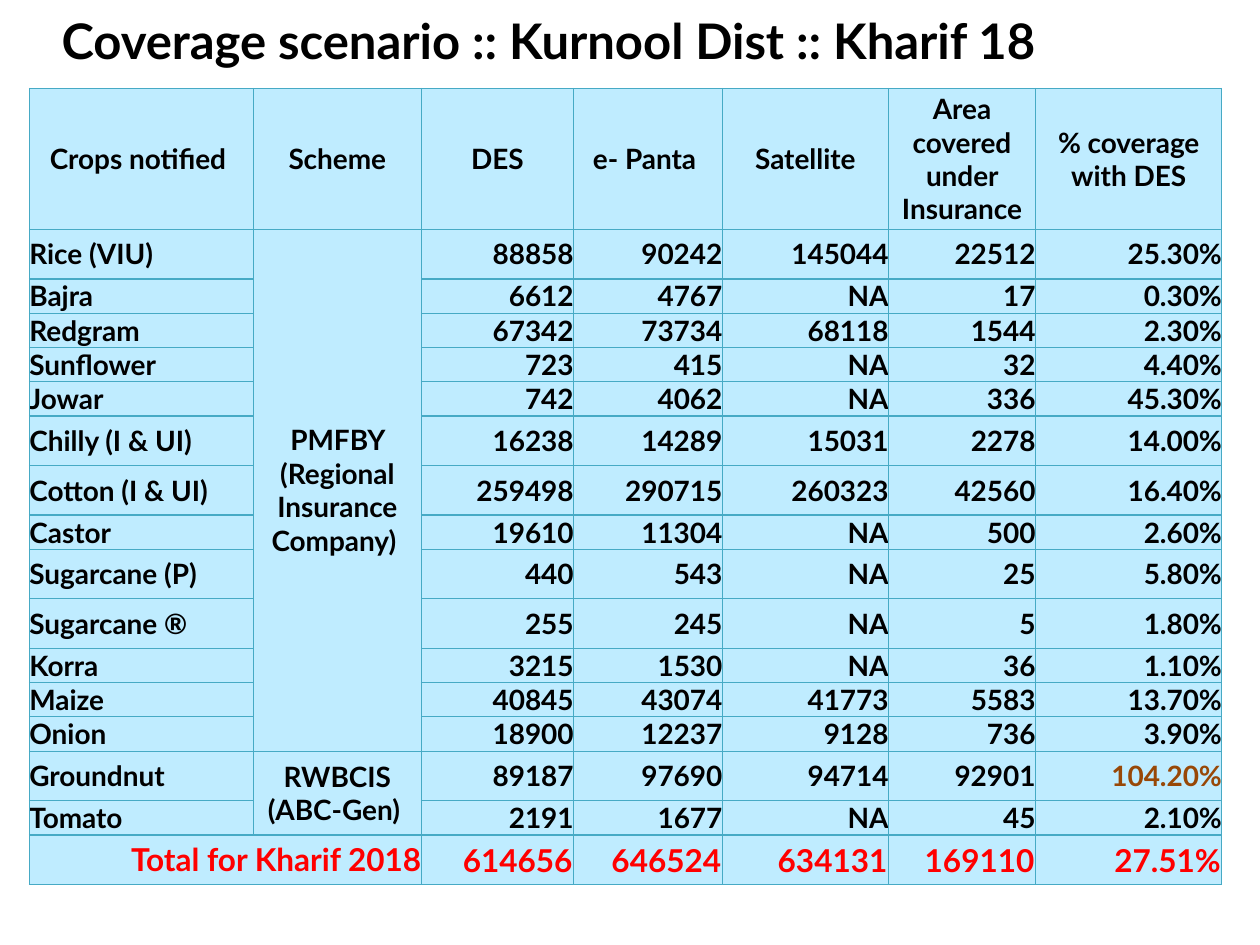
from lxml.etree import SubElement as Sub
from pptx import Presentation as Deck
from pptx.dml.color import RGBColor as Rgb
from pptx.enum.text import MSO_ANCHOR as Anchor, MSO_AUTO_SIZE as Fit, PP_ALIGN as Align
from pptx.oxml.ns import qn
from pptx.util import Pt

BLACK = Rgb(0x00, 0x00, 0x00)
RED = Rgb(0xFF, 0x00, 0x00)
BROWN = Rgb(0x98, 0x48, 0x07)
SKY = Rgb(0xBF, 0xEC, 0xFF)
TEAL = Rgb(0x46, 0xAA, 0xC5)

FONT = "Lato"
TALL, SHORT = 28.3, 19.6
WIDTHS = (128, 96, 87, 85, 95, 84, 106.5)
HEADS = ("Crops notified ", "Scheme", "DES", "e- Panta ", "Satellite",
         "Area covered under Insurance", "% coverage with DES")
CROPS = (
    ("Rice (VIU)", TALL, "88858", "90242", "145044", "22512", "25.30%"),
    ("Bajra", SHORT, "6612", "4767", "NA", "17", "0.30%"),
    ("Redgram", SHORT, "67342", "73734", "68118", "1544", "2.30%"),
    ("Sunflower", SHORT, "723", "415", "NA", "32", "4.40%"),
    ("Jowar", SHORT, "742", "4062", "NA", "336", "45.30%"),
    ("Chilly (I & UI)", TALL, "16238", "14289", "15031", "2278", "14.00%"),
    ("Cotton (I & UI)", TALL, "259498", "290715", "260323", "42560", "16.40%"),
    ("Castor", SHORT, "19610", "11304", "NA", "500", "2.60%"),
    ("Sugarcane (P)", TALL, "440", "543", "NA", "25", "5.80%"),
    ("Sugarcane ®", TALL, "255", "245", "NA", "5", "1.80%"),
    ("Korra", SHORT, "3215", "1530", "NA", "36", "1.10%"),
    ("Maize", SHORT, "40845", "43074", "41773", "5583", "13.70%"),
    ("Onion", SHORT, "18900", "12237", "9128", "736", "3.90%"),
    ("Groundnut", TALL, "89187", "97690", "94714", "92901", "104.20%"),
    ("Tomato", SHORT, "2191", "1677", "NA", "45", "2.10%"),
)
TOTALS = ("614656", "646524", "634131", "169110", "27.51%")
SCHEMES = ((1, 13, "PMFBY (Regional Insurance Company) "),
           (14, 15, "RWBCIS (ABC-Gen) "))


def write(frame, text, size=16, color=BLACK, align=Align.LEFT):
    """Add a bold run to the first paragraph of a text frame."""
    para = frame.paragraphs[0]
    para.alignment = align
    run = para.add_run()
    run.text = text
    font = run.font
    font.name, font.size, font.bold = FONT, Pt(size), True
    font.color.rgb = color


def edge(cell):
    """Draw a thin line on all four sides of a cell."""
    props = cell._tc.get_or_add_tcPr()
    for side in ("a:lnL", "a:lnR", "a:lnT", "a:lnB"):
        line = Sub(props, qn(side), w=str(Pt(0.75)))
        Sub(Sub(line, qn("a:solidFill")), qn("a:srgbClr"), val=str(TEAL))


def style(cell, inset=0):
    """Set the lines, fill, margins and anchor of a cell."""
    edge(cell)
    cell.fill.solid()
    cell.fill.fore_color.rgb = SKY
    cell.margin_left = cell.margin_top = cell.margin_right = Pt(inset)
    cell.margin_bottom = 0
    cell.vertical_anchor = Anchor.MIDDLE


def add_title(slide):
    """Place and fill the slide title."""
    title = slide.shapes.title
    title.left, title.top, title.width, title.height = Pt(28), Pt(0), Pt(670), Pt(39.6)
    frame = title.text_frame
    frame.auto_size, frame.vertical_anchor = Fit.NONE, Anchor.MIDDLE
    write(frame, "Coverage scenario :: Kurnool Dist :: Kharif 18", size=28)
    write(frame, " ", size=35)


def add_grid(slide):
    """Add the styled, empty table."""
    highs = [80.6, *(crop[1] for crop in CROPS), TALL]
    grid = slide.shapes.add_table(len(highs), len(WIDTHS), Pt(16.8), Pt(50.5),
                                  Pt(sum(WIDTHS)), Pt(sum(highs))).table
    grid.first_row = grid.horz_banding = False
    for col, width in zip(grid.columns, WIDTHS):
        col.width = Pt(width)
    last = len(highs) - 1
    for i, (row, high) in enumerate(zip(grid.rows, highs)):
        row.height = Pt(high)
        for j, cell in enumerate(row.cells):
            style(cell, inset=0.72 if i == last and j > 1 else 0)
    return grid


def fill_grid(grid):
    """Write the headings, crops, schemes and totals."""
    for j, head in enumerate(HEADS):
        write(grid.cell(0, j).text_frame, head, align=Align.CENTER)
    for i, (crop, _, *values) in enumerate(CROPS, 1):
        write(grid.cell(i, 0).text_frame, crop)
        for j, value in enumerate(values, 2):
            color = BROWN if value == "104.20%" else BLACK
            write(grid.cell(i, j).text_frame, value, color=color, align=Align.RIGHT)
    for first, final, scheme in SCHEMES:
        grid.cell(first, 1).merge(grid.cell(final, 1))
        write(grid.cell(first, 1).text_frame, scheme, align=Align.CENTER)
    last = len(CROPS) + 1
    grid.cell(last, 0).merge(grid.cell(last, 1))
    for j, value in zip((0, 2, 3, 4, 5, 6), ("Total for Kharif 2018", *TOTALS)):
        write(grid.cell(last, j).text_frame, value, size=18, color=RED, align=Align.RIGHT)


def main():
    """Build and save the slide."""
    deck = Deck()
    deck.slide_width, deck.slide_height = Pt(720), Pt(540)
    slide = deck.slides.add_slide(deck.slide_layouts[5])
    add_title(slide)
    fill_grid(add_grid(slide))
    deck.save("out.pptx")


if __name__ == "__main__":
    main()
